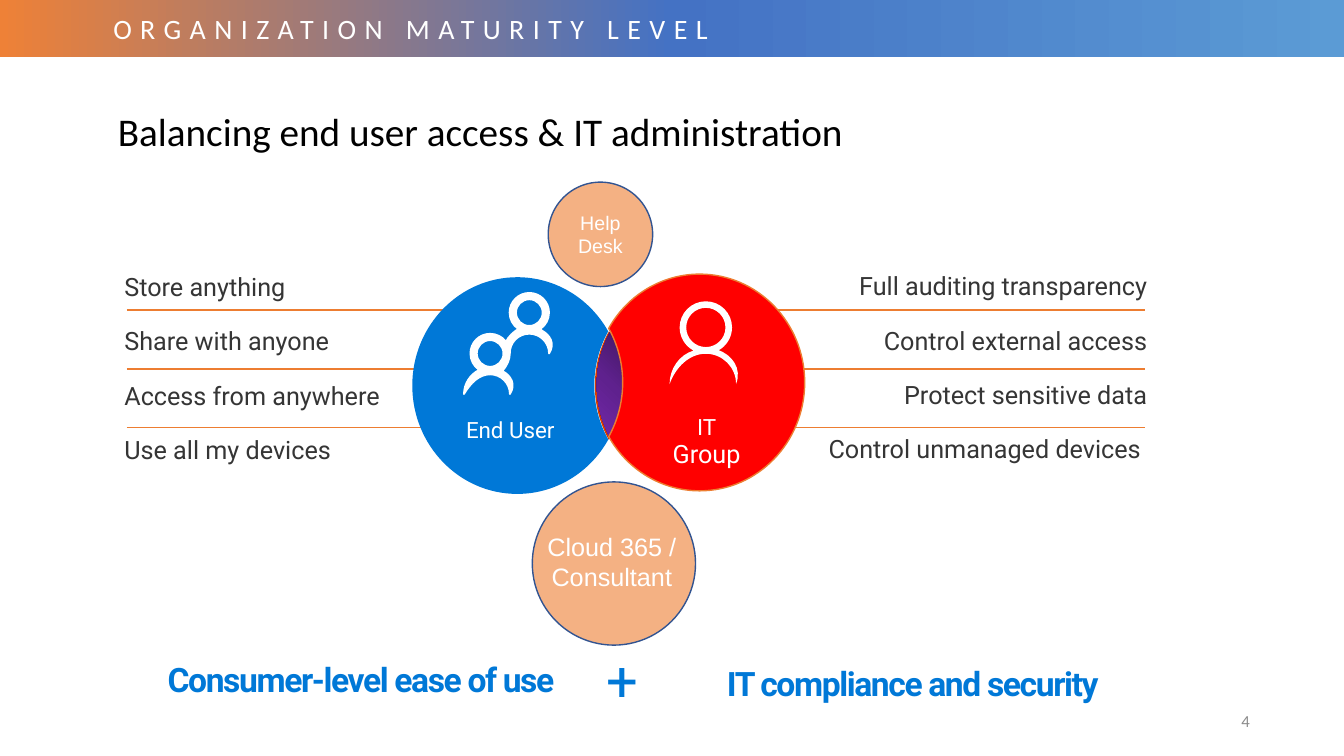
from copy import deepcopy
from math import cos, sin, tan, radians
from lxml.etree import SubElement
from pptx import Presentation
from pptx.dml.color import RGBColor
from pptx.enum.shapes import MSO_CONNECTOR, MSO_SHAPE
from pptx.enum.text import MSO_ANCHOR, MSO_AUTO_SIZE, PP_ALIGN
from pptx.oxml.ns import qn
from pptx.util import Pt

HUES = {
    "white": "FFFFFF", "black": "000000", "ink": "353535", "gray": "8C8C8C",
    "blue": "0078D7", "red": "FF0000", "rust": "D83B01", "line": "ED7D31",
    "peach": "F4B183", "navy": "325491", "sky": "5B9BD5", "mid": "4472C4",
    "warm": "EE8137", "plum": "431764", "grape": "5F218E", "violet": "7128A8",
}
BAND = "ORGANIZATION MATURITY LEVEL"
TITLE = "Balancing end user access & IT administration"
LISTS = [
    (["Store anything", "Share with anyone", "Access from anywhere",
      "Use all my devices"], (77.3, 189, 283, 169), "left"),
    (["Full auditing transparency", "Control external access",
      "Protect sensitive data", "Control unmanaged devices "],
     (548, 188.6, 283, 169), "right"),
]
RULES = {"spans": [(90.7, 358.6), (549.4, 817.9)], "top": 221.4, "step": 42.1}
RX, RY, HALF = 75, 77.4, 65
LOBES = [
    ("", (434.9, 275.4), (-1, -30, 30), (1, 150, 210), "rust", None),
    ("", (436.3, 274.7), (-1, -30, 30), (1, 150, 210), "plum grape violet", None),
    ("End User", (434.5, 275.4), (-1, 30, 330), (1, 210, 150), "blue", None),
    ("IT", (434.8, 273.2), (1, 210, 510), (-1, 30, -30), "red", "line"),
]
HEAD, BUST = (504.2, 233.9), (504.2, 274.3)
BACK, REAR = (378.1, 223.3), (378.1, 252.5)
FRONT, FORE = (350.1, 252.5), (350.1, 281.5)
ICONS = [
    ([[(HEAD, 18.7, 62, -242), (BUST, 25.9, -109, -180), (BUST, 21.6, -180, 0),
       (BUST, 25.9, 0, -71)],
      [(HEAD, 14, 180, 540)]], None),
    ([[(BACK, 14.1, 56, -236), (REAR, 18.7, -115, -153), (FRONT, 14.1, -36, -236),
       (FORE, 18.7, -115, -180), (FORE, 14.1, -180, 0), (FORE, 18.7, 0, -62),
       (FRONT, 14.1, 56, 0), (REAR, 14.1, -180, 0), (REAR, 18.7, 0, -62)],
      [(FRONT, 9.5, 90, 450)], [(BACK, 9.5, 90, 450)]], "white"),
]
DISCS = [
    ("", (380.2, 344.2, 116.6, 116.6)),
    ("Help\nDesk", (391.6, 130.1, 74.6, 74.6)),
]
LABELS = [
    ("Cloud 365 /\nConsultant", (381.6, 375.8, 110.9, 51.1), "top", "center",
     {"size": 18, "name": "Arial", "color": "white"}),
    ("Group", (468, 309.6, 73.4, 28.8), "top", "center",
     {"size": 18, "name": "Roboto", "color": "white"}),
    ("Consumer-level ease of use", (90.7, 465.1, 334.1, 40.3), "middle", "center",
     {"size": 24, "name": "Roboto", "color": "blue", "bold": True, "track": -1}),
    ("IT compliance and security ", (491, 467.8, 326.9, 40.3), "middle", "center",
     {"size": 24, "name": "Roboto", "color": "blue", "bold": True, "track": -1}),
    ("+", (409, 454.3, 70.6, 61.9), "middle", "center",
     {"size": 40, "name": "Roboto", "color": "blue", "track": -1}),
    ("4", (684, 500.4, 216, 28.8), "middle", "right",
     {"size": 12, "name": "Calibri", "color": "gray"}),
]
SIDES = ("left", "top", "width", "height")


def hue(name):
    return RGBColor.from_string(HUES[name])


def place(shape, box):
    for side, size in zip(SIDES, box):
        setattr(shape, side, Pt(size))


def write(shape, texts, font, anchor="middle", align="center",
          inset=(7.2, 3.6, 7.2, 3.6), para=None):
    frame = shape.text_frame
    look = {"word_wrap": True, "auto_size": MSO_AUTO_SIZE.NONE,
            "vertical_anchor": getattr(MSO_ANCHOR, anchor.upper())}
    for side, gap in zip(("left", "top", "right", "bottom"), inset):
        look["margin_" + side] = Pt(gap)
    for key, val in look.items():
        setattr(frame, key, val)
    for i, text in enumerate(texts):
        line = frame.add_paragraph() if i else frame.paragraphs[0]
        line.text = text.replace("\n", "\v")
        form = {"alignment": getattr(PP_ALIGN, align.upper()), **(para or {})}
        for key, val in form.items():
            setattr(line, key, val)
        for run in line.runs:
            face = {"size": Pt(font["size"]), "name": font["name"],
                    "bold": font.get("bold", False)}
            for key, val in face.items():
                setattr(run.font, key, val)
            run.font.color.rgb = hue(font["color"])
            if "track" in font:
                run._r.get_or_add_rPr().set("spc", str(font["track"] * 100))


def paint(shape, fill, line=None, width=1, angle=0):
    shape.shadow.inherit = False
    names = fill.split()
    if len(names) > 1:
        shape.fill.gradient()
        shape.fill.gradient_angle = angle
        stops = shape._element.spPr.find(qn("a:gradFill")).find(qn("a:gsLst"))
        stops.append(deepcopy(stops[0]))
        for i, (stop, name) in enumerate(zip(shape.fill.gradient_stops, names)):
            stop.position = i / (len(names) - 1)
            stop.color.rgb = hue(name)
    else:
        shape.fill.solid()
        shape.fill.fore_color.rgb = hue(fill)
    if line:
        shape.line.color.rgb = hue(line)
        shape.line.width = Pt(width)
    else:
        shape.line.fill.background()


def arc(mid, rx, ry, start, end):
    low, high = sorted((start, end))
    cuts = [low, *(a for a in range(-360, 720, 90) if low < a < high), high]
    if start > end:
        cuts.reverse()

    def dot(turn, pull=0):
        t = radians(turn)
        return (Pt(mid[0] + rx * (cos(t) - pull * sin(t))),
                Pt(mid[1] + ry * (sin(t) + pull * cos(t))))

    dots = [dot(start)]
    for a, b in zip(cuts, cuts[1:]):
        pull = 4 / 3 * tan(radians(b - a) / 4)
        dots += [dot(a, pull), dot(b, -pull), dot(b)]
    return dots


def trace(shapes, loops):
    pen = None
    for loop in loops:
        dots = []
        for part in loop:
            dots += arc(*part)[1 if dots else 0:]
        if pen:
            pen.move_to(*dots[0])
        else:
            pen = shapes.build_freeform(*dots[0], scale=1.0)
        pen.add_line_segments(dots[1:], close=True)
    shape = pen.convert_to_shape()
    for outline in shape._element.iter(qn("a:path")):
        legs = outline.findall(qn("a:lnTo"))
        for i in range(0, len(legs), 3):
            curve = SubElement(outline, qn("a:cubicBezTo"))
            legs[i].addprevious(curve)
            for leg in legs[i:i + 3]:
                curve.append(leg[0])
                outline.remove(leg)
    return shape


def lobes(shapes):
    for text, (x, y), one, two, fill, line in LOBES:
        loop = [((x + side * HALF, y), RX, RY, start, end)
                for side, start, end in (one, two)]
        shape = trace(shapes, [loop])
        paint(shape, fill, line, angle=225)
        if text:
            write(shape, [text], {"size": 16, "name": "Roboto", "color": "white"},
                  "bottom", inset=(14.4, 11.5, 14.4, 36), para={"line_spacing": 0.9})


def icons(shapes):
    for loops, line in ICONS:
        shape = trace(shapes, [[(mid, r, r, start, end) for mid, r, start, end in loop]
                               for loop in loops])
        paint(shape, "white", line, 1.25)


def rules(shapes):
    for start, end in RULES["spans"]:
        for row in range(3):
            y = RULES["top"] + row * RULES["step"]
            rule = shapes.add_connector(MSO_CONNECTOR.STRAIGHT,
                                        Pt(start), Pt(y), Pt(end), Pt(y))
            rule.line.color.rgb = hue("line")
            rule.line.width = Pt(1)
            SubElement(rule._element.spPr, qn("a:effectLst"))


def main():
    deck = Presentation()
    deck.slide_width, deck.slide_height = Pt(960), Pt(540)
    slide = deck.slides.add_slide(deck.slide_layouts[3])
    shapes = slide.shapes
    place(shapes.title, (77, 59, 753.8, 73.4))
    write(shapes.title, [TITLE], {"size": 28, "name": "Calibri", "color": "black"},
          align="left", para={"line_spacing": 0.9})
    for i, (items, box, align) in enumerate(LISTS):
        body = slide.placeholders[i + 1]
        place(body, box)
        write(body, items, {"size": 18, "name": "Roboto", "color": "ink"}, "top", align,
              (11.5, 7.2, 11.5, 7.2),
              {"line_spacing": 0.9, "space_before": Pt(0), "space_after": Pt(19.4)})
        for line in body.text_frame.paragraphs:
            props = line._p.get_or_add_pPr()
            for key in ("marL", "indent"):
                props.set(key, "0")
            SubElement(props, qn("a:buNone"))
    band = shapes.add_shape(MSO_SHAPE.RECTANGLE, *map(Pt, (0, 0, 960, 41)))
    paint(band, "sky mid warm", angle=180)
    write(band, [BAND], {"size": 20, "name": "Calibri", "color": "white", "track": 6},
          align="left", inset=(80.9, 3.6, 7.2, 3.6))
    rules(shapes)
    lobes(shapes)
    icons(shapes)
    for text, box in DISCS:
        disc = shapes.add_shape(MSO_SHAPE.OVAL, *map(Pt, box))
        paint(disc, "peach", "navy")
        if text:
            write(disc, [text], {"size": 14, "name": "Arial", "color": "white"})
    for text, box, anchor, align, font in LABELS:
        label = shapes.add_textbox(*map(Pt, box))
        write(label, [text], font, anchor, align)
    deck.save("out.pptx")


if __name__ == "__main__":
    main()
